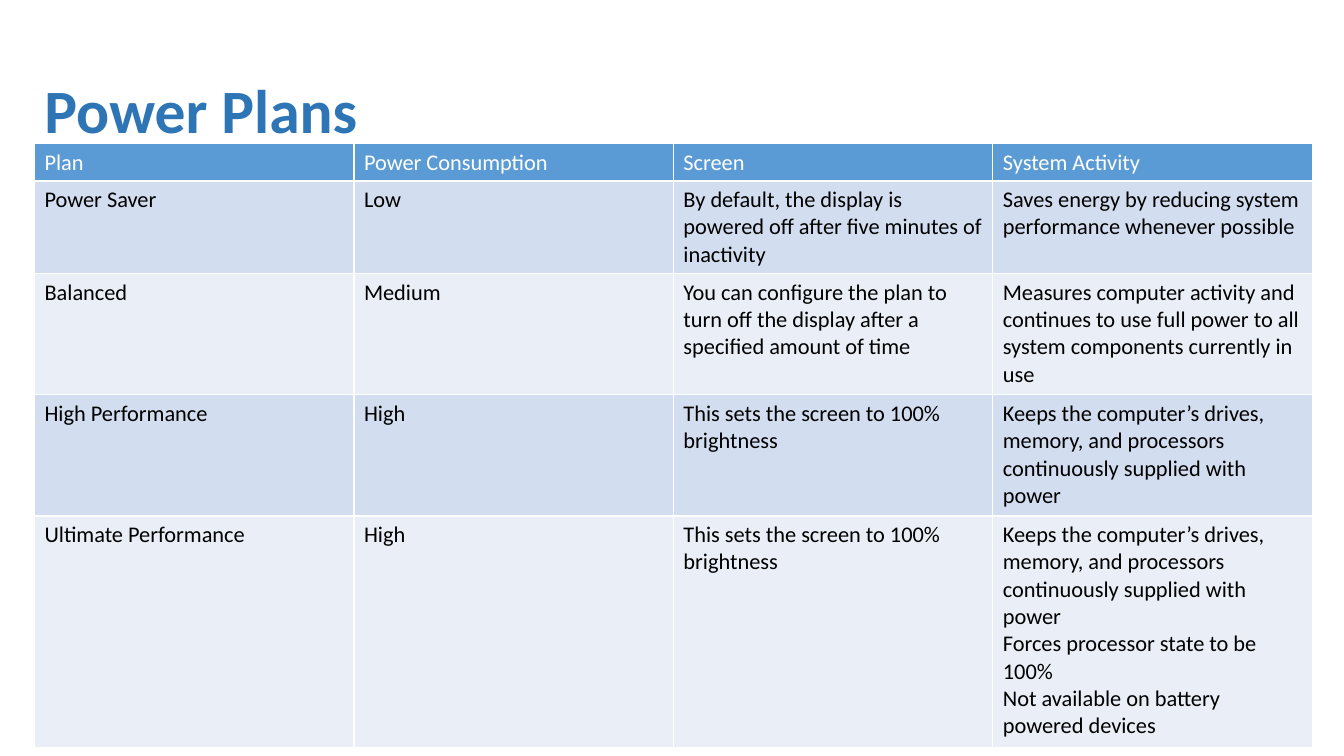
import pptx
import pptx.dml.color
import pptx.enum.text
import pptx.oxml
import pptx.oxml.ns
import pptx.util

Cm = pptx.util.Cm
RGB = pptx.dml.color.RGBColor

WHITE = RGB(0xFF, 0xFF, 0xFF)
BLACK = RGB(0x00, 0x00, 0x00)
TITLE = RGB(0x2E, 0x75, 0xB6)
HEAD = RGB(0x5B, 0x9B, 0xD5)
BANDS = [RGB(0xEA, 0xEF, 0xF7), RGB(0xD2, 0xDE, 0xEF)]

BRIGHT = "This sets the screen to 100% brightness"
SUPPLY = ("Keeps the computer’s drives, memory, and processors "
          "continuously supplied with power")
PLANS = [
    ["Plan", "Power Consumption", "Screen", "System Activity"],
    ["Power Saver", "Low",
     "By default, the display is powered off after five minutes of inactivity",
     "Saves energy by reducing system performance whenever possible"],
    ["Balanced", "Medium",
     "You can configure the plan to turn off the display after a specified "
     "amount of time",
     "Measures computer activity and continues to use full power to all "
     "system components currently in use"],
    ["High Performance", "High", BRIGHT, SUPPLY],
    ["Ultimate Performance", "High", BRIGHT,
     "\n".join([SUPPLY, "Forces processor state to be 100%",
                "Not available on battery powered devices"])],
]
HEIGHTS = [0.94, 2.34, 3.05, 3.05, 5.84]


def style(para, color, size, bold=False):
    look = {"name": "Calibri", "size": pptx.util.Pt(size), "bold": bold}
    for key, value in look.items():
        setattr(para.font, key, value)
    para.font.color.rgb = color


def edge(cell):
    """Draw a thin white line on all four sides of a cell."""
    props = cell._tc.get_or_add_tcPr()
    for side in "LRTB":
        props.append(pptx.oxml.parse_xml(
            f'<a:ln{side} {pptx.oxml.ns.nsdecls("a")} w="12700"><a:solidFill>'
            f'<a:srgbClr val="{WHITE}"/></a:solidFill></a:ln{side}>'))


def add_title(slide, left, top, width, height):
    box = slide.shapes.add_textbox(left, top, width, height)
    frame = box.text_frame
    form = {"word_wrap": True, "text": "Power Plans",
            "vertical_anchor": pptx.enum.text.MSO_ANCHOR.MIDDLE}
    for key, value in form.items():
        setattr(frame, key, value)
    para = frame.paragraphs[0]
    para.line_spacing = 0.9
    style(para, TITLE, 44, True)


def add_plans(slide, left, top, width):
    rows, cols = len(PLANS), len(PLANS[0])
    table = slide.shapes.add_table(
        rows, cols, left, top, width, Cm(sum(HEIGHTS))).table
    for r, (texts, height) in enumerate(zip(PLANS, HEIGHTS)):
        table.rows[r].height = Cm(height)
        fill, ink = (BANDS[r % 2], BLACK) if r else (HEAD, WHITE)
        for c, text in enumerate(texts):
            cell = table.cell(r, c)
            cell.text = text
            edge(cell)
            cell.fill.solid()
            cell.fill.fore_color.rgb = fill
            for para in cell.text_frame.paragraphs:
                style(para, ink, 16)


def main():
    deck = pptx.Presentation()
    deck.slide_width, deck.slide_height = Cm(33.87), Cm(19.05)
    slide = deck.slides.add_slide(deck.slide_layouts[6])
    left, width = Cm(0.87), Cm(32.2)
    add_title(slide, left, Cm(1.01), width, Cm(3.68))
    add_plans(slide, left, Cm(3.62), width)
    deck.save("out.pptx")


if __name__ == "__main__":
    main()
